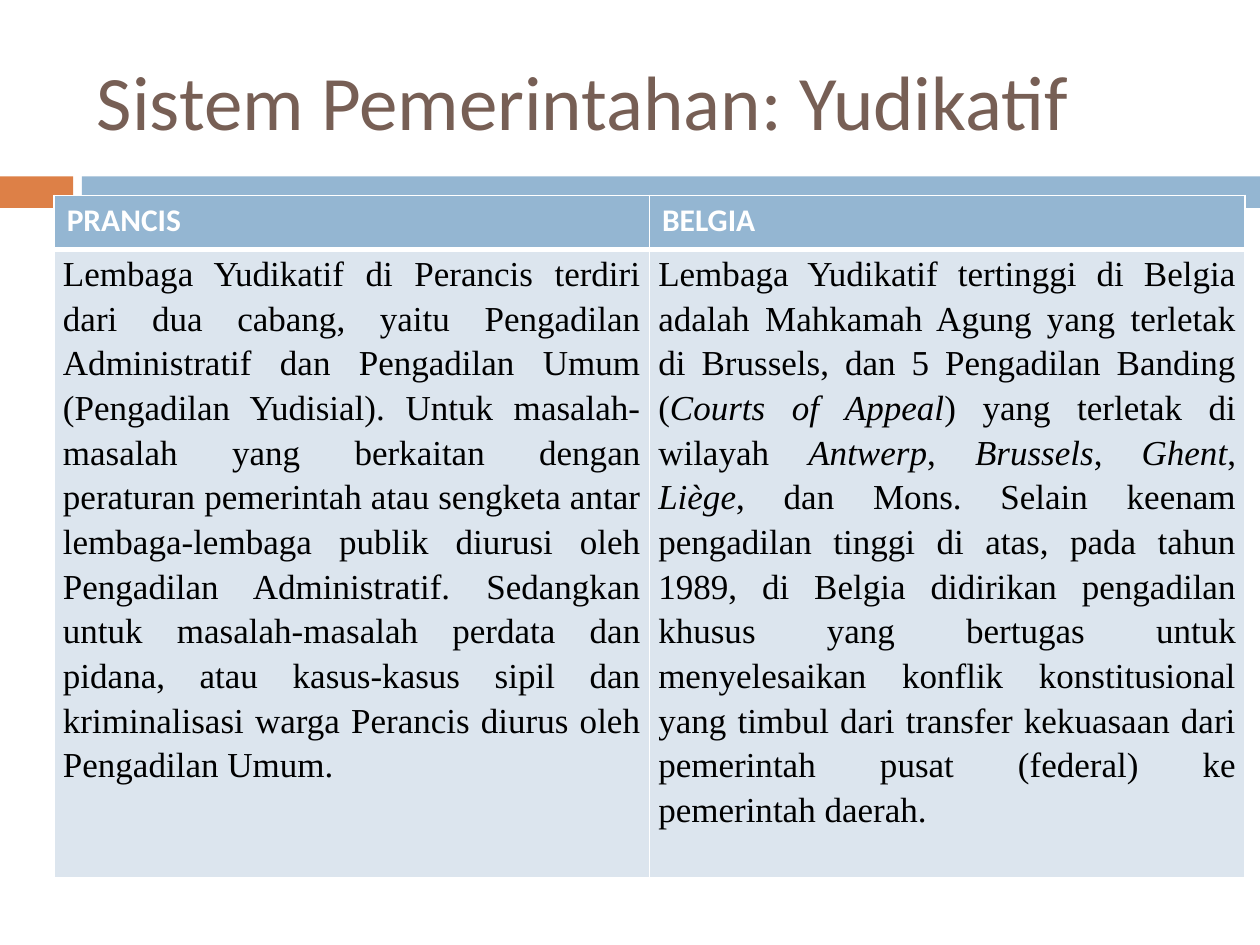
from lxml.etree import SubElement
from pptx import Presentation
from pptx.dml.color import RGBColor
from pptx.enum.shapes import MSO_SHAPE
from pptx.enum.text import MSO_ANCHOR, PP_ALIGN
from pptx.oxml.ns import qn
from pptx.util import Inches, Pt

ORANGE, BLUE, PALE, BROWN = "DD8047", "94B6D2", "DCE5EE", "775F55"
WHITE, BLACK = "FFFFFF", "000000"

FRANCE = [
    "Lembaga Yudikatif di Perancis terdiri dari dua cabang, yaitu Pengadilan "
    "Administratif dan Pengadilan Umum (Pengadilan Yudisial). Untuk "
    "masalah-masalah yang berkaitan dengan peraturan pemerintah atau sengketa "
    "antar lembaga-lembaga publik diurusi oleh Pengadilan Administratif. "
    "Sedangkan untuk masalah-masalah perdata dan pidana, atau kasus-kasus sipil "
    "dan kriminalisasi warga Perancis diurus oleh Pengadilan Umum."
]
BELGIUM = [
    "Lembaga Yudikatif tertinggi di Belgia adalah Mahkamah Agung yang terletak "
    "di Brussels, dan 5 Pengadilan Banding (",
    "Courts of Appeal", ") yang terletak di wilayah ",
    "Antwerp", ", ", "Brussels", ", ", "Ghent", ", ", "Liège",
    ", dan Mons. Selain keenam pengadilan tinggi di atas, pada tahun 1989, di "
    "Belgia didirikan pengadilan khusus yang bertugas untuk menyelesaikan "
    "konflik konstitusional yang timbul dari transfer kekuasaan dari pemerintah "
    "pusat (federal) ke pemerintah daerah.",
]


def color(value):
    return RGBColor.from_string(value)


class SlideBuilder:
    """Holds the style and the current slide."""

    heading_font = "Calibri"
    body_font = "Times New Roman"

    def __init__(self, page):
        self.page = page

    def bar(self, left, width, fill):
        box = self.page.shapes.add_shape(
            MSO_SHAPE.RECTANGLE, Inches(left), Inches(1.4), Inches(width), Inches(0.25))
        box.shadow.inherit = False
        box.fill.solid()
        box.fill.fore_color.rgb = color(fill)
        box.line.fill.background()

    def fill_para(self, para, spans, font, size, ink, bold=False):
        para.font.name, para.font.size, para.font.bold = font, Pt(size), bold
        para.font.color.rgb = color(ink)
        for index, text in enumerate(spans):
            span = para.add_run()
            span.text = text
            if index % 2:
                span.font.italic = True

    def title(self, text):
        box = self.page.shapes.add_textbox(
            Inches(0.67), Inches(0.25), Inches(8.92), Inches(1.08))
        frame = box.text_frame
        frame.word_wrap = True
        frame.vertical_anchor = MSO_ANCHOR.MIDDLE
        self.fill_para(frame.paragraphs[0], [text], self.heading_font, 44, BROWN)

    def style_cell(self, cell, fill, top, bottom):
        properties = cell._tc.get_or_add_tcPr()
        for side, width in zip("LRTB", (1, 1, top, bottom)):
            line = SubElement(properties, qn(f"a:ln{side}"), w=str(Pt(width)))
            paint = SubElement(line, qn("a:solidFill"))
            SubElement(paint, qn("a:srgbClr"), val=WHITE)
        cell.fill.solid()
        cell.fill.fore_color.rgb = color(fill)

    def table(self, columns):
        table = self.page.shapes.add_table(
            2, len(columns), Inches(0.43), Inches(1.55), Inches(9.45), Inches(5.22)).table
        table.rows[0].height, table.rows[1].height = Inches(0.43), Inches(4.79)
        for index, (heading, spans) in enumerate(columns):
            head, body = table.cell(0, index), table.cell(1, index)
            self.style_cell(head, BLUE, 1, 3)
            self.fill_para(head.text_frame.paragraphs[0], [heading],
                           self.heading_font, 18, WHITE, bold=True)
            self.style_cell(body, PALE, 3, 1)
            body.margin_left = body.margin_right = Inches(0.07)
            body.margin_top = body.margin_bottom = 0
            para = body.text_frame.paragraphs[0]
            para.alignment, para.line_spacing = PP_ALIGN.JUSTIFY, 1.15
            self.fill_para(para, spans, self.body_font, 20, BLACK)


def main():
    deck = Presentation()
    deck.slide_width, deck.slide_height = Inches(10), Inches(7.5)
    builder = SlideBuilder(deck.slides.add_slide(deck.slide_layouts[6]))
    builder.bar(0, 0.58, ORANGE)
    builder.bar(0.65, 9.35, BLUE)
    builder.title("Sistem Pemerintahan: Yudikatif")
    builder.table([("PRANCIS", FRANCE), ("BELGIA", BELGIUM)])
    deck.save("out.pptx")


if __name__ == "__main__":
    main()
